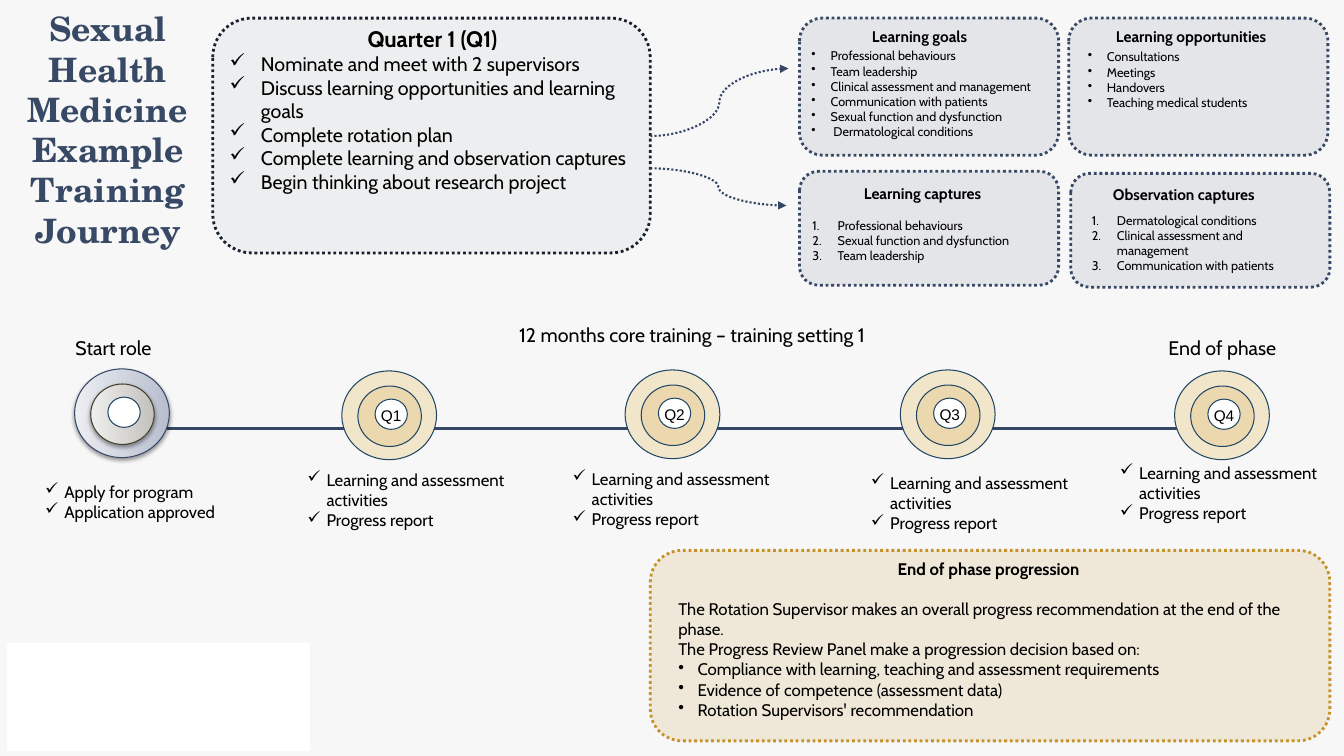
"""Build the training journey slide: quarter plan, timeline and end of phase progression."""
from lxml import etree
from pptx import Presentation
from pptx.dml.color import RGBColor
from pptx.enum.dml import MSO_LINE
from pptx.enum.shapes import MSO_CONNECTOR, MSO_SHAPE
from pptx.enum.text import MSO_ANCHOR, MSO_AUTO_SIZE, PP_ALIGN
from pptx.oxml.ns import qn
from pptx.util import Emu, Pt

PX = 9144
OVAL, RECT, ROUND = MSO_SHAPE.OVAL, MSO_SHAPE.RECTANGLE, MSO_SHAPE.ROUNDED_RECTANGLE
STRAIGHT, CURVE = MSO_CONNECTOR.STRAIGHT, MSO_CONNECTOR.CURVE
DOT = MSO_LINE.ROUND_DOT
CENTER, MIDDLE = PP_ALIGN.CENTER, MSO_ANCHOR.MIDDLE
GROW, FIXED = MSO_AUTO_SIZE.SHAPE_TO_FIT_TEXT, MSO_AUTO_SIZE.NONE
BODY, TITLE, LABEL = "Cabin", "TeX Gyre Schola", "Arial"

PAPER = RGBColor(0xF7, 0xF7, 0xF7)
BLACK = RGBColor(0x00, 0x00, 0x00)
WHITE = RGBColor(0xFF, 0xFF, 0xFF)
NAVY = RGBColor(0x38, 0x49, 0x65)
LINE_NAVY = RGBColor(0x36, 0x47, 0x66)
INK = RGBColor(0x19, 0x20, 0x2D)
RING_LINE = RGBColor(0x20, 0x46, 0x66)
CREAM = RGBColor(0xF2, 0xE6, 0xCA)
SAND = RGBColor(0xD3, 0xA4, 0x40)
GOLD = RGBColor(0xC5, 0x93, 0x2B)
BROWN = RGBColor(0x42, 0x3D, 0x29)
BLUE_GREYS = RGBColor(0xEC, 0xEE, 0xF2), RGBColor(0xB8, 0xBE, 0xCE)
WARM_GREYS = RGBColor(0xEF, 0xEF, 0xED), RGBColor(0xC3, 0xC1, 0xBC)

PANELS = [
    ((793, 18, 257, 136), "Learning goals", (855, 22, 122, 29), (795, 43, 268, 101), "•",
     ["Professional behaviours", "Team leadership", "Clinical assessment and management",
      "Communication with patients", "Sexual function and dysfunction",
      " Dermatological conditions"]),
    ((1060, 18, 257, 136), "Learning opportunities", (1097, 22, 183, 29), (1069, 44, 228, 71), "•",
     ["Consultations", "Meetings", "Handovers", "Teaching medical students"]),
    ((793, 170, 257, 113), "Learning captures", (847, 178, 149, 29), (796, 211, 228, 56), "1.",
     ["Professional behaviours", "Sexual function and dysfunction", "Team leadership"]),
    ((1062, 172, 257, 113), "Observation captures", (1094, 179, 174, 29), (1073, 206, 228, 71), "1.",
     ["Dermatological conditions", "Clinical assessment and management",
      "Communication with patients"]),
]
QUARTER = ["Quarter 1 (Q1)", "Nominate and meet with 2 supervisors",
           "Discuss learning opportunities and learning goals", "Complete rotation plan",
           "Complete learning and observation captures",
           "Begin thinking about research project"]
PROGRESSION = [
    "End of phase progression",
    "The Rotation Supervisor makes an overall progress recommendation at the end of the phase.",
    "The Progress Review Panel make a progression decision based on:",
    "Compliance with learning, teaching and assessment requirements",
    "Evidence of competence (assessment data)", "Rotation Supervisors' recommendation"]
START_TASKS = ["Apply for program", "Application approved"]
QUARTER_TASKS = ["Learning and assessment activities", "Progress report"]
QUARTERS = [("Q1", 339, 368, (295, 461, 219, 71)), ("Q2", 620, 367, (558, 460, 262, 71)),
            ("Q3", 893, 367, (854, 464, 219, 71)), ("Q4", 1165, 368, (1101, 454, 232, 71))]
CAPTIONS = [("Start role", (65, 328, 97, 34)), ("End of phase", (1149, 328, 135, 34)),
            ("12 months core training – training setting 1", (505, 315, 376, 34))]


def emu(lengths):
    """Turn px lengths into EMU."""
    return [Emu(n * PX) for n in lengths]


def add_box(s, kind, box, fill, line, width, alpha=100, dash=None):
    """Add an outlined shape; a pair of colours gives a left-to-right gradient."""
    sp = s.shapes.add_shape(kind, *emu(box))
    sp.shadow.inherit = False
    if isinstance(fill, RGBColor):
        sp.fill.solid()
        sp.fill.fore_color.rgb = fill
    else:
        sp.fill.gradient()
        sp.fill.gradient_angle = 0
        for stop, color in zip(sp.fill.gradient_stops, fill):
            stop.color.rgb = color
    if alpha < 100:
        color = sp.fill._xPr.find(qn("a:solidFill")).find(qn("a:srgbClr"))
        etree.SubElement(color, qn("a:alpha"), val=str(alpha * 1000))
    sp.line.color.rgb = line
    sp.line.width = Pt(width)
    if dash:
        sp.line.dash_style = dash
    return sp


def add_soft_shadow(sp):
    """Drop a soft shadow straight below a shape."""
    effects = sp._element.spPr.find(qn("a:effectLst"))
    shadow = etree.SubElement(effects, qn("a:outerShdw"), blurRad=str(Pt(3.1)),
                              dist=str(Pt(1.6)), dir="5400000", rotWithShape="0")
    color = etree.SubElement(shadow, qn("a:srgbClr"), val="000000")
    etree.SubElement(color, qn("a:alpha"), val="38000")


def add_line(s, kind, ends, width, dotted_arrow=False):
    """Add a navy connector, optionally a dotted arrow."""
    c = s.shapes.add_connector(kind, *emu(ends))
    c.line.color.rgb = LINE_NAVY
    c.line.width = Pt(width)
    if dotted_arrow:
        c.line.dash_style = DOT
        etree.SubElement(c.line._get_or_add_ln(), qn("a:tailEnd"), type="triangle")
    etree.SubElement(c._element.spPr, qn("a:effectLst"))


def add_text(s, box, lines, wrap=True):
    """Add a text box with one paragraph per line and return its frame."""
    tf = s.shapes.add_textbox(*emu(box)).text_frame
    tf.word_wrap = wrap
    tf.auto_size = GROW
    tf.text = "\n".join(lines)
    return tf


def style(paragraphs, size, font=BODY, color=BLACK, bold=False, align=None):
    """Format the runs and alignment of paragraphs."""
    for p in paragraphs:
        if align is not None:
            p.alignment = align
        for r in p.runs:
            r.font.size = Pt(size)
            r.font.name = font
            r.font.bold = bold
            r.font.color.rgb = color


def add_marks(paragraphs, mark, indent):
    """Give paragraphs a hanging bullet, tick or number."""
    for p in paragraphs:
        pPr = p._p.get_or_add_pPr()
        pPr.set("marL", str(indent * PX))
        pPr.set("indent", str(-indent * PX))
        if mark == "1.":
            etree.SubElement(pPr, qn("a:buAutoNum"), type="arabicPeriod")
        else:
            etree.SubElement(pPr, qn("a:buChar"), char=mark)


def add_list(s, box, lines, mark, indent, size):
    """Add a text box holding one marked list."""
    tf = add_text(s, box, lines)
    add_marks(tf.paragraphs, mark, indent)
    style(tf.paragraphs, size)


def add_label(s, box, text, size, **look):
    """Add a one-line label that does not wrap."""
    style(add_text(s, box, [text], wrap=False).paragraphs, size, **look)


def add_rings(s, left, top, outer, middle, lines, alpha=100):
    """Add a timeline milestone of three nested ovals and return the outer two."""
    rings = [add_box(s, OVAL, (left, top, 94, 88), outer, lines[0], 0.75),
             add_box(s, OVAL, (left + 16, top + 15, 63, 60), middle, lines[1], 0.75, alpha)]
    add_box(s, OVAL, (left + 33, top + 28, 32, 30), WHITE, RING_LINE, 0.75)
    return rings


def add_title(s):
    """Add the slide title."""
    tf = add_text(s, (4, 64, 206, 128), ["Sexual Health Medicine Example", "Training Journey"])
    tf.auto_size = FIXED
    tf.vertical_anchor = MIDDLE
    tf.margin_left, tf.margin_right, tf.margin_top, tf.margin_bottom = emu((7, 7, 4, 4))
    style(tf.paragraphs, 24, TITLE, NAVY, True, CENTER)


def add_timeline(s):
    """Add the milestones with their labels and tasks."""
    add_line(s, STRAIGHT, (90, 425, 1234, 425), 2.25)
    for ring in add_rings(s, 74, 366, BLUE_GREYS, WARM_GREYS, (LINE_NAVY, BROWN)):
        add_soft_shadow(ring)
    add_list(s, (35, 473, 216, 50), START_TASKS, "✓", 19, 12)
    for name, left, top, tasks_box in QUARTERS:
        add_rings(s, left, top, CREAM, SAND, (RING_LINE, RING_LINE), 20)
        style(add_text(s, (left + 29, top + 30, 83, 29), [name]).paragraphs, 11, LABEL)
        add_list(s, tasks_box, QUARTER_TASKS, "✓", 19, 12)
    for caption, box in CAPTIONS:
        add_label(s, box, caption, 14)


def add_quarter_plan(s):
    """Add the first quarter card, its arrows and the four detail panels."""
    add_box(s, ROUND, (211, 18, 434, 233), NAVY, INK, 2, 5, DOT)
    head, *tasks = add_text(s, (218, 20, 422, 222), QUARTER).paragraphs
    style([head], 16, bold=True, align=CENTER)
    add_marks(tasks, "✓", 31)
    style(tasks, 14)
    for ends in ((645, 135, 782, 68), (645, 167, 780, 204)):
        add_line(s, CURVE, ends, 1.5, dotted_arrow=True)
    for box, heading, heading_box, list_box, mark, items in PANELS:
        add_box(s, ROUND, box, NAVY, NAVY, 2, 10, DOT)
        add_label(s, heading_box, heading, 11, bold=True)
        add_list(s, list_box, items, mark, 25 if mark == "1." else 19, 9)


def add_progression(s):
    """Add the end of phase card."""
    add_box(s, ROUND, (645, 546, 674, 189), GOLD, GOLD, 2, 15, DOT)
    head, *body = add_text(s, (663, 549, 635, 172), PROGRESSION).paragraphs
    add_marks(body[2:], "•", 19)
    style([head], 12, bold=True, align=CENTER)
    style(body, 12)
    body[0].space_before = Pt(14.4)


def main():
    """Build and save the slide."""
    prs = Presentation()
    prs.slide_width, prs.slide_height = emu((1333, 750))
    s = prs.slides.add_slide(prs.slide_layouts[6])
    s.background.fill.solid()
    s.background.fill.fore_color.rgb = PAPER
    add_title(s)
    add_quarter_plan(s)
    add_timeline(s)
    add_progression(s)
    add_box(s, RECT, (8, 639, 298, 105), WHITE, WHITE, 2)
    prs.save("out.pptx")


if __name__ == "__main__":
    main()
